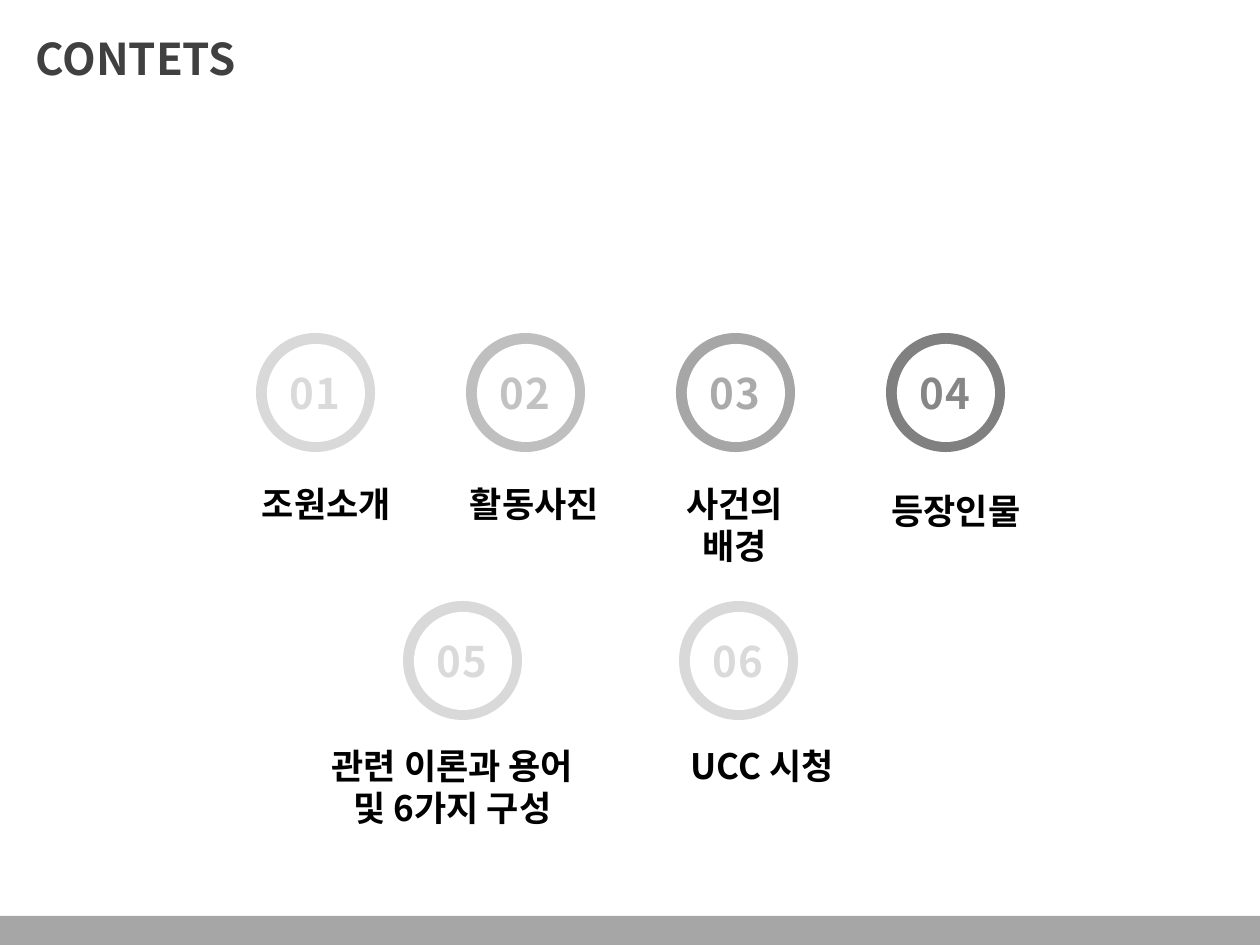
from lxml.etree import SubElement
from pptx import Presentation
from pptx.dml.color import RGBColor
from pptx.enum.shapes import MSO_SHAPE as SHAPE
from pptx.enum.text import MSO_AUTO_SIZE as AUTO, PP_ALIGN as ALIGN
from pptx.oxml.ns import qn
from pptx.util import Emu, Pt

PX = 914400 / 126
W, H = 1260, 945
FONT = "Noto Sans CJK KR"
TITLE = "CONTETS"
RING, HOLE, RIM = 119, 98, 11
ROWS = [
    dict(left=256, step=210, top=333, items=[
        ("01", "D9D9D9", "조원소개", (239, 476, 175, 55)),
        ("02", "BFBFBF", "활동사진", (449, 476, 171, 55)),
        ("03", "A6A6A6", "사건의 배경", (658, 476, 154, 97)),
        ("04", "808080", "등장인물", (867, 483, 178, 55)),
    ]),
    dict(left=403, step=276, top=601, items=[
        ("05", "D9D9D9", "관련 이론과 용어 및 6가지 구성", (305, 738, 295, 97)),
        ("06", "D9D9D9", "UCC 시청", (640, 738, 244, 55)),
    ]),
]


def px(*values):
    return [Emu(round(v * PX)) for v in values]


def rgb(color):
    return RGBColor.from_string(color)


def shape(shapes, kind, box, color):
    sp = shapes.add_shape(kind, *px(*box))
    sp.shadow.inherit = False
    sp.fill.solid()
    sp.fill.fore_color.rgb = rgb(color)
    sp.line.fill.background()


def text(shapes, words, box, size=20, color="000000", align=ALIGN.CENTER,
         alpha=None, spacing=None):
    tf = shapes.add_textbox(*px(*box)).text_frame
    tf.word_wrap = True
    tf.auto_size = AUTO.SHAPE_TO_FIT_TEXT
    p = tf.paragraphs[0]
    p.alignment = align
    r = p.add_run()
    r.text = words
    r.font.size = Pt(size)
    r.font.bold = True
    r.font.name = FONT
    r.font.color.rgb = rgb(color)
    rPr = r._r.get_or_add_rPr()
    SubElement(rPr, qn("a:ea")).set("typeface", FONT)
    if spacing:
        rPr.set("spc", str(round(spacing * 100)))
    if alpha:
        clr = rPr.find(qn("a:solidFill")).find(qn("a:srgbClr"))
        SubElement(clr, qn("a:alpha")).set("val", str(alpha * 1000))


def badge(s, number, color, x, y):
    shapes = s.shapes.add_group_shape().shapes
    shape(shapes, SHAPE.OVAL, (x, y, RING, RING), color)
    shape(shapes, SHAPE.OVAL, (x + RIM, y + RIM, HOLE, HOLE), "FFFFFF")
    text(shapes, number, (x + 15, y + 28, 88, 63), size=24, color=color,
         alpha=95, spacing=0.5)


def main():
    prs = Presentation()
    prs.slide_width, prs.slide_height = px(W, H)
    s = prs.slides.add_slide(prs.slide_layouts[6])
    text(s.shapes, TITLE, (23, 26, 323, 66), size=25, color="404040", align=ALIGN.LEFT)
    for row in ROWS:
        for i, (number, color, label, box) in enumerate(row["items"]):
            badge(s, number, color, row["left"] + i * row["step"], row["top"])
            text(s.shapes, label, box)
    shape(s.shapes, SHAPE.RECTANGLE, (0, 916, W, H - 916), "A6A6A6")
    prs.save("out.pptx")


if __name__ == "__main__":
    main()
